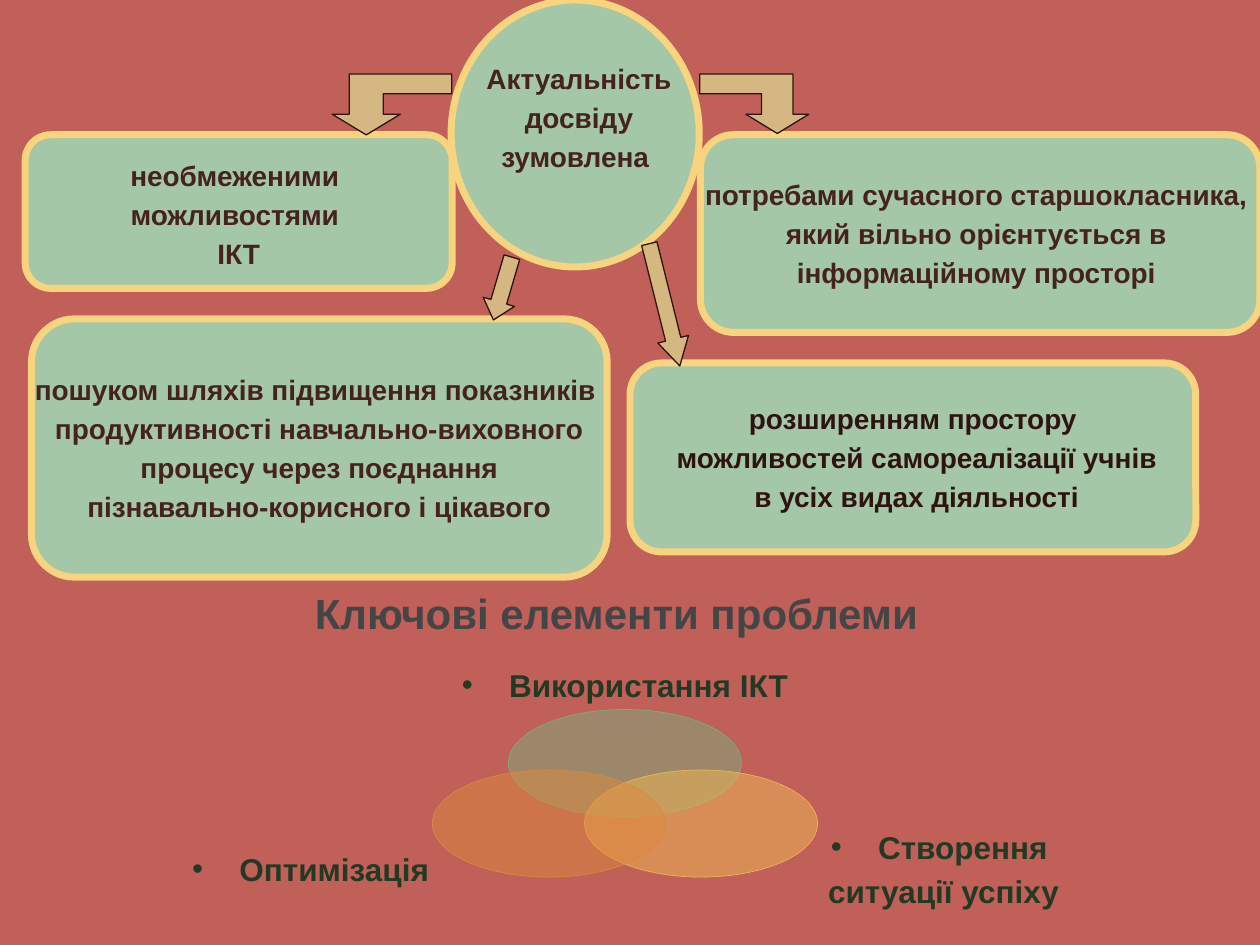
from dataclasses import dataclass

from lxml.etree import SubElement
from pptx import Presentation
from pptx.dml.color import RGBColor
from pptx.enum.shapes import MSO_SHAPE
from pptx.enum.text import MSO_ANCHOR, PP_ALIGN
from pptx.oxml.ns import qn
from pptx.util import Pt


@dataclass(frozen=True)
class Theme:
    """Colours, font and type sizes of the slide."""
    font: str = "Arial"
    back: str = "C16059"
    panel: str = "A4C8A7"
    border: str = "F7D47D"
    arrow: str = "D5B781"
    dark: str = "2F1311"
    brown: str = "452120"
    heading: str = "434547"
    caption: str = "223A24"
    green: str = "79AF7D"
    yellow: str = "F0B854"
    orange: str = "DC893E"
    body_size: float = 16
    caption_size: float = 18
    heading_size: float = 24


THEME = Theme()


def rgb(value):
    """Return the colour for a hex string."""
    return RGBColor.from_string(value)


def write_text(s, lines, size, color, align=PP_ALIGN.CENTER, bullet=False,
               insets=(7.2, 3.6, 7.2, 3.6), wrap=False, spacing=None,
               anchor=MSO_ANCHOR.MIDDLE):
    """Write one bold paragraph per line into a shape."""
    tf = s.text_frame
    tf.word_wrap = wrap
    tf.vertical_anchor = anchor
    tf.margin_left, tf.margin_top, tf.margin_right, tf.margin_bottom = map(Pt, insets)
    for i, line in enumerate(lines):
        p = tf.add_paragraph() if i else tf.paragraphs[0]
        p.alignment = align
        if i:
            p.space_before = Pt(size * 0.2)
        if spacing:
            p.line_spacing = spacing
        if bullet:
            pPr = p._p.get_or_add_pPr()
            pPr.set("marL", str(Pt(27)))
            pPr.set("indent", str(-Pt(27)))
            if i == 0:
                SubElement(pPr, qn("a:buFont")).set("typeface", THEME.font)
                SubElement(pPr, qn("a:buChar")).set("char", "•")
        r = p.add_run()
        r.text = line
        r.font.name = THEME.font
        r.font.size = Pt(size)
        r.font.bold = True
        r.font.color.rgb = rgb(color)


def paint(s, fill, line, width, alpha=None):
    """Set fill, outline and optional opacity in percent."""
    s.shadow.inherit = False
    s.fill.solid()
    s.fill.fore_color.rgb = rgb(fill)
    s.line.color.rgb = rgb(line)
    s.line.width = Pt(width)
    if alpha is not None:
        color = s._element.spPr.find(qn("a:solidFill"))[0]
        SubElement(color, qn("a:alpha")).set("val", str(alpha * 1000))


def add_panel(slide, kind, box, lines, color=THEME.brown, bottom=3.6):
    """Add a bordered panel with centred text."""
    s = slide.shapes.add_shape(kind, *map(Pt, box))
    paint(s, THEME.panel, THEME.border, 4)
    write_text(s, lines, THEME.body_size, color, insets=(7.2, 3.6, 7.2, bottom))


def add_bent_arrow(slide, box, head, to_left):
    """Add an arrow that leaves sideways and turns down."""
    x, y, w, h = box
    thick, neck = 11.3, 23
    profile = [(head / 2, h), (head, neck), (head * 3 / 4, neck),
               (head * 3 / 4, thick), (w, thick), (w, 0),
               (head / 4, 0), (head / 4, neck), (0, neck)]
    points = [(Pt(x + (px if to_left else w - px)), Pt(y + py)) for px, py in profile]
    builder = slide.shapes.build_freeform(*points[0])
    builder.add_line_segments(points[1:], close=True)
    paint(builder.convert_to_shape(), THEME.arrow, THEME.dark, 0.75)


def add_down_arrow(slide, box, rotation, head):
    """Add a tilted straight arrow."""
    s = slide.shapes.add_shape(MSO_SHAPE.DOWN_ARROW, *map(Pt, box))
    s.adjustments[0], s.adjustments[1] = 0.5, head
    s.rotation = rotation
    paint(s, THEME.arrow, THEME.dark, 0.75)


def add_reasons(slide, box):
    """Place the central circle, four reasons and their arrows."""
    x, y, w, h = box

    def at(left, top, width, height):
        return x + left, y + top, width, height

    add_panel(slide, MSO_SHAPE.OVAL, at(257.8, 0, 141.8, 152.6),
              [" Актуальність", " досвіду", "зумовлена"], bottom=22.2)
    panels = [
        (at(14.4, 77, 244, 87.8), THEME.brown, 0,
         ["необмеженими ", "можливостями ", "ІКТ"]),
        (at(18, 182.2, 329, 147.6), THEME.brown, 3.6,
         ["пошуком шляхів підвищення показників ",
          "продуктивності навчально-виховного",
          " процесу через поєднання ",
          "пізнавально-корисного і цікавого"]),
        (at(400.3, 77, w - 400.3, 113), THEME.brown, 3.6,
         ["потребами сучасного старшокласника, ",
          "який вільно орієнтується в ",
          "інформаційному просторі "]),
        (at(360, 207.4, 323.3, 108), THEME.dark, 3.6,
         ["розширенням простору",
          " можливостей самореалізації учнів",
          " в усіх видах діяльності"]),
    ]
    for panel, color, bottom, lines in panels:
        add_panel(slide, MSO_SHAPE.ROUNDED_RECTANGLE, panel, lines, color, bottom)
    add_bent_arrow(slide, at(189.8, 42.3, 68.3, 34.8), 39, True)
    add_bent_arrow(slide, at(399.8, 42.3, 62.4, 34), 36, False)
    add_down_arrow(slide, at(277.9, 146.2, 18.7, 37.4), 16.4, 0.577)
    add_down_arrow(slide, at(370.8, 138.2, 18, 72), 346, 0.873)


def add_heading(slide, box):
    """Place the heading of the lower half."""
    s = slide.shapes.add_textbox(*map(Pt, box))
    write_text(s, ["Ключові елементи проблеми"], THEME.heading_size, THEME.heading,
               align=PP_ALIGN.LEFT, wrap=True, spacing=0.8, anchor=MSO_ANCHOR.TOP)


def add_venn(slide, box):
    """Place three overlapping ellipses with their captions."""
    x, y, w, h = box
    width, height, label, line = 133.2, 61.2, 200, 26
    center = x + w / 2
    reach = (w - label) / 2
    low, bottom = y + 61.6, y + h - line
    sets = [
        (0, y + 27, THEME.green, 0, y + line / 2, ["Використання ІКТ"]),
        (43.5, low, THEME.yellow, reach, bottom, ["Створення", " ситуації успіху"]),
        (-43.5, low, THEME.orange, -reach, bottom, ["Оптимізація"]),
    ]
    for shift, top, color, text_shift, text_middle, lines in sets:
        s = slide.shapes.add_shape(MSO_SHAPE.OVAL, Pt(center + shift - width / 2),
                                   Pt(top), Pt(width), Pt(height))
        paint(s, color, color, 0.37, alpha=50)
        tall = line * len(lines)
        s = slide.shapes.add_textbox(Pt(center + text_shift - label / 2),
                                     Pt(text_middle - tall / 2), Pt(label), Pt(tall))
        write_text(s, lines, THEME.caption_size, THEME.caption, bullet=True,
                   insets=(0, 0, 0, 0), wrap=True)


def main():
    """Build and save the slide."""
    prs = Presentation()
    prs.slide_width, prs.slide_height = Pt(720), Pt(540)
    slide = prs.slides.add_slide(prs.slide_layouts[6])
    slide.background.fill.solid()
    slide.background.fill.fore_color.rgb = rgb(THEME.back)
    add_reasons(slide, (0, 0, 720, 330))
    add_venn(slide, (77.5, 378.4, 559.2, 144))
    add_heading(slide, (172.8, 337.7, 371.5, 30.2))
    prs.save("out.pptx")


if __name__ == "__main__":
    main()
